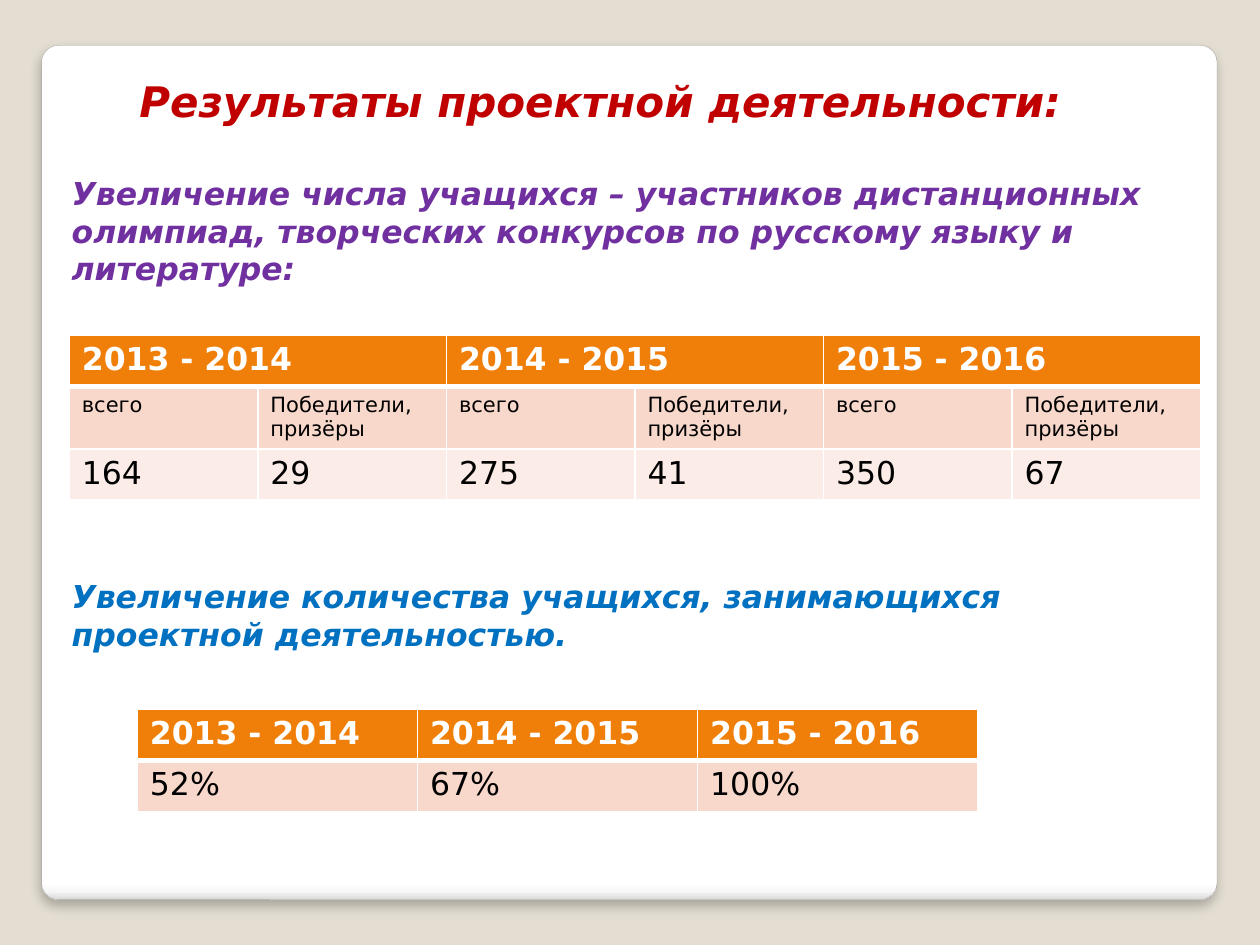
"""Build the slide on project work results with its two tables."""
from dataclasses import dataclass

from lxml import etree
from pptx import Presentation
from pptx import util as u
from pptx.dml.color import RGBColor
from pptx.enum import shapes, text
from pptx.oxml import ns, parse_xml

SLIDE_WIDTH, SLIDE_HEIGHT = u.Inches(10), u.Inches(7.5)
FONT = "DejaVu Sans"
COLOURS = {
    "backdrop": "E3DED1", "white": "FFFFFF", "black": "000000", "edge": "A4A4A4",
    "fade": "F7F7F7", "foot": "DADADA", "title": "C00000", "contests": "7030A0",
    "projects": "0070C0", "header": "F07F09", "band": "F9D8CC", "light_band": "FCECE7",
}
YEARS = ["2013 - 2014", "2014 - 2015", "2015 - 2016"]


@dataclass(frozen=True)
class Area:
    """Place and size in percent of the slide."""
    left: float
    top: float
    width: float
    height: float

    def lengths(self) -> tuple[int, int, int, int]:
        return (across(self.left), down(self.top), across(self.width), down(self.height))


@dataclass(frozen=True)
class Heading:
    area: Area
    wording: str
    size: int
    colour: str
    align: text.PP_ALIGN = text.PP_ALIGN.LEFT


@dataclass(frozen=True)
class Row:
    """A table row whose height is in percent of the slide."""
    values: list[str]
    height: float
    fill: str
    size: int = 18
    colour: str = "black"
    is_header: bool = False


@dataclass(frozen=True)
class Results:
    left: float
    top: float
    width: float
    columns: int
    rows: list[Row]


def across(percent: float) -> int:
    return round(SLIDE_WIDTH * percent / 100)


def down(percent: float) -> int:
    return round(SLIDE_HEIGHT * percent / 100)


def rgb(name: str) -> RGBColor:
    return RGBColor.from_string(COLOURS[name])


def style_runs(frame, size: int, colour: str, bold: bool, italic: bool) -> None:
    for paragraph in frame.paragraphs:
        for run in paragraph.runs:
            font = run.font
            font.name, font.size = FONT, u.Pt(size)
            font.bold, font.italic = bold, italic
            font.color.rgb = rgb(colour)


def draw_panel(slide, area: Area) -> None:
    panel = slide.shapes.add_shape(shapes.MSO_SHAPE.ROUNDED_RECTANGLE, *area.lengths())
    panel.adjustments[0] = 0.02
    panel.line.color.rgb = rgb("edge")
    panel.line.width = u.Pt(0.16)
    panel.fill.gradient()
    panel.fill.gradient_angle = 270
    properties = panel.fill._xPr
    stops = properties.find(".//" + ns.qn("a:gsLst"))
    for stop in list(stops):
        stops.remove(stop)
    for percent, name in [(0, "white"), (98, "white"), (99, "fade"), (100, "foot")]:
        stop = etree.SubElement(stops, ns.qn("a:gs"), pos=str(percent * 1000))
        etree.SubElement(stop, ns.qn("a:srgbClr"), val=COLOURS[name])
    properties.append(parse_xml(
        f'<a:effectLst {ns.nsdecls("a")}>'
        f'<a:outerShdw blurRad="{u.Pt(6)}" dist="{u.Pt(4)}" dir="5400000" rotWithShape="0">'
        f'<a:srgbClr val="{COLOURS["black"]}"><a:alpha val="25000"/></a:srgbClr>'
        '</a:outerShdw></a:effectLst>'))


def draw_heading(slide, heading: Heading) -> None:
    frame = slide.shapes.add_textbox(*heading.area.lengths()).text_frame
    frame.word_wrap = True
    frame.text = heading.wording
    frame.paragraphs[0].alignment = heading.align
    style_runs(frame, heading.size, heading.colour, bold=True, italic=True)


def border_cell(cell, top: int, bottom: int) -> None:
    properties = cell._tc.get_or_add_tcPr()
    for position, (side, width) in enumerate(
            [("lnL", 1), ("lnR", 1), ("lnT", top), ("lnB", bottom)]):
        properties.insert(position, parse_xml(
            f'<a:{side} {ns.nsdecls("a")} w="{u.Pt(width)}"><a:solidFill>'
            f'<a:srgbClr val="{COLOURS["white"]}"/></a:solidFill></a:{side}>'))


def draw_results(slide, results: Results) -> None:
    area = Area(results.left, results.top, results.width,
                sum(row.height for row in results.rows))
    table = slide.shapes.add_table(
        len(results.rows), results.columns, *area.lengths()).table
    for column in table.columns:
        column.width = across(results.width / results.columns)
    for index, row in enumerate(results.rows):
        table.rows[index].height = down(row.height)
        below_header = index > 0 and results.rows[index - 1].is_header
        for cell in table.rows[index].cells:
            cell.fill.solid()
            cell.fill.fore_color.rgb = rgb(row.fill)
            border_cell(cell, 3 if below_header else 1, 3 if row.is_header else 1)
        span = results.columns // len(row.values)
        for place, value in enumerate(row.values):
            cell = table.cell(index, place * span)
            if span > 1:
                cell.merge(table.cell(index, (place + 1) * span - 1))
            cell.text_frame.text = value
            style_runs(cell.text_frame, row.size, row.colour, row.is_header, False)


def main() -> None:
    deck = Presentation()
    deck.slide_width, deck.slide_height = SLIDE_WIDTH, SLIDE_HEIGHT
    slide = deck.slides.add_slide(deck.slide_layouts[6])
    slide.background.fill.solid()
    slide.background.fill.fore_color.rgb = rgb("backdrop")
    draw_panel(slide, Area(3.3, 4.8, 93.3, 90.4))

    years = Row(YEARS, 5.4, "header", colour="white", is_header=True)
    contests = Results(5.5, 35.47, 89.8, 6, [
        years,
        Row(["всего", "Победители, призёры"] * 3, 6.67, "band", size=12),
        Row(["164", "29", "275", "41", "350", "67"], 5.4, "light_band"),
    ])
    projects = Results(10.9, 75.07, 66.7, 3, [
        years, Row(["52%", "67%", "100%"], 5.4, "band")])
    headings = [
        Heading(Area(8.6, 7.33, 78.1, 6.67), "Результаты проектной деятельности:",
                24, "title", text.PP_ALIGN.CENTER),
        Heading(Area(4.7, 17.73, 92.2, 17.47),
                "Увеличение числа учащихся – участников дистанционных олимпиад, "
                "творческих конкурсов по русскому языку и литературе:", 18, "contests"),
        Heading(Area(4.7, 60.4, 91.4, 9.47),
                "Увеличение количества учащихся, занимающихся проектной деятельностью.",
                18, "projects"),
    ]
    for heading in headings:
        draw_heading(slide, heading)
    for results in (contests, projects):
        draw_results(slide, results)
    deck.save("out.pptx")


if __name__ == "__main__":
    main()
